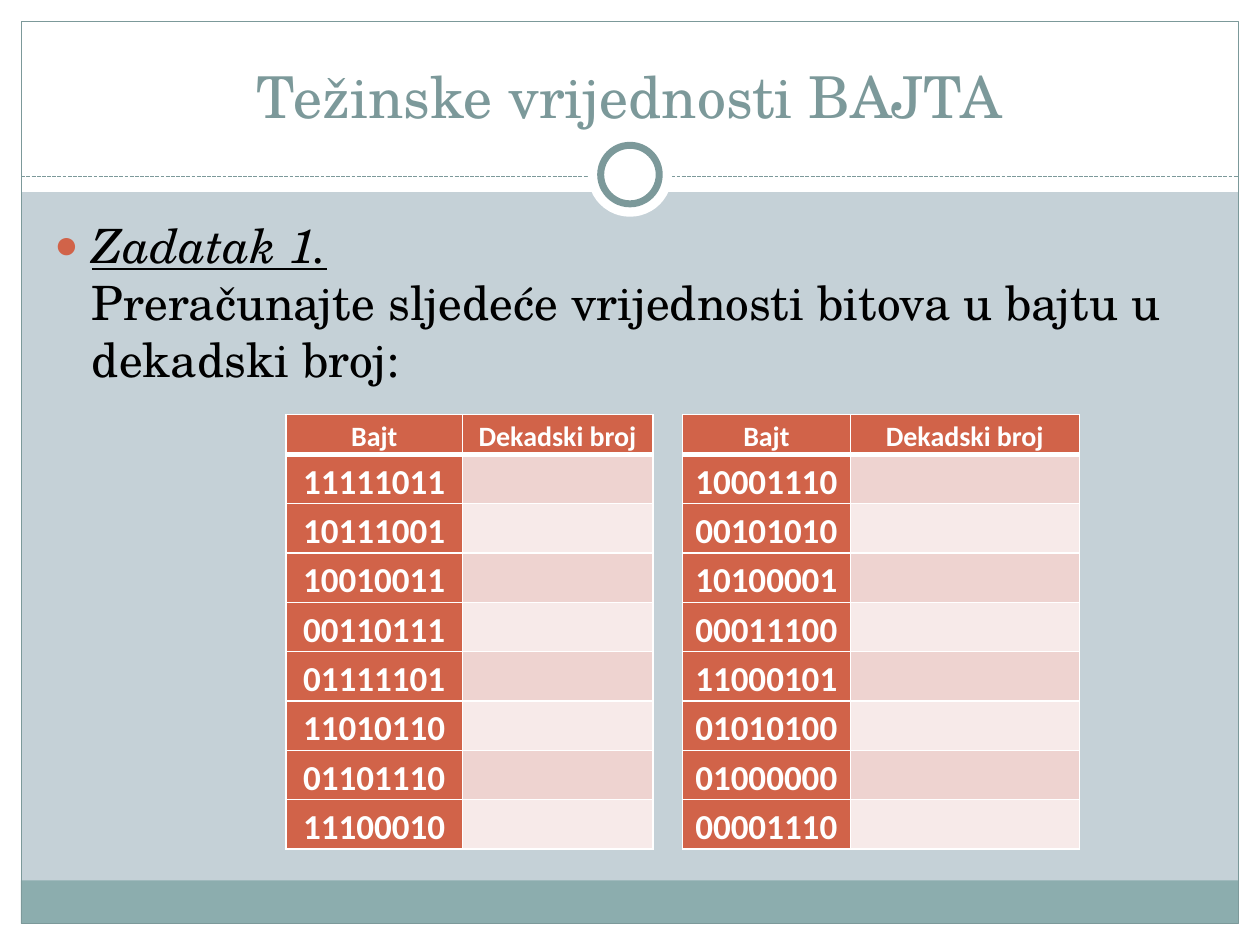
import pptx
import pptx.util
import pptx.dml.color
import pptx.enum.dml
import pptx.enum.shapes
import pptx.enum.text
import pptx.oxml
import pptx.oxml.ns

Cm, Pt = pptx.util.Cm, pptx.util.Pt
KIND = pptx.enum.shapes.MSO_SHAPE
ALIGN = pptx.enum.text.PP_ALIGN
SERIF, SANS = "TeX Gyre Schola", "Calibri"
WHITE, TEAL, RED = "FFFFFF", "7C999A", "D16349"
BANDS = ("EED3D0", "F7EAE9")

TITLE = "Težinske vrijednosti BAJTA"
TASK = "Zadatak 1."
TEXT = "Preračunajte sljedeće vrijednosti bitova u bajtu u dekadski broj:"
HEAD = ("Bajt", "Dekadski broj")
TABLES = [
    (5.77, (3.55, 3.84), ("11111011", "10111001", "10010011", "00110111",
                          "01111101", "11010110", "01101110", "11100010")),
    (13.76, (3.38, 4.62), ("10001110", "00101010", "10100001", "00011100",
                           "11000101", "01010100", "01000000", "00001110")),
]
SHAPES = [
    (KIND.RECTANGLE, (0, 18.62, 25.4, 0.43), WHITE, None, 0),
    (KIND.RECTANGLE, (0, 0, 25.4, 3.87), WHITE, None, 0),
    (KIND.RECTANGLE, (0, 0, 0.43, 19.05), WHITE, None, 0),
    (KIND.RECTANGLE, (24.97, 0, 0.43, 19.05), WHITE, None, 0),
    (KIND.RECTANGLE, (0.42, 17.75, 24.54, 0.87), "8CADAE", None, 0),
    (KIND.RECTANGLE, (0.43, 0.43, 24.54, 18.19), None, TEAL, 0.75),
    (KIND.OVAL, (11.85, 2.67, 1.7, 1.7), WHITE, None, 0),
    (KIND.OVAL, (12.11, 2.93, 1.18, 1.18), WHITE, TEAL, 4),
]


def paint(form, tone):
    if form is None:
        return
    if hasattr(form, "solid"):
        form.solid()
        form = form.fore_color
    form.rgb = pptx.dml.color.RGBColor.from_string(tone)


def style(para, face, size, tone):
    para.font.name, para.font.size = face, Pt(size)
    paint(para.font.color, tone)


def place(shape, box):
    shape.left, shape.top, shape.width, shape.height = map(Cm, box)


def node(host, xml):
    space = pptx.oxml.ns.nsdecls("a")
    host.append(pptx.oxml.parse_xml(xml.replace("/>", f" {space}/>", 1)
                if xml.endswith("/>") and xml.count("<") == 1
                else xml.replace(">", f" {space}>", 1)))


def draw(slide, kind, box, fill, line, width):
    shape = slide.shapes.add_shape(kind, *map(Cm, box))
    shape.shadow.inherit = False
    if fill:
        paint(shape.fill, fill)
    else:
        shape.fill.background()
    if line:
        paint(shape.line.fill, line)
        shape.line.width = Pt(width)
    else:
        shape.line.fill.background()


def rule(slide):
    line = slide.shapes.add_connector(
        pptx.enum.shapes.MSO_CONNECTOR.STRAIGHT,
        Cm(0.43), Cm(3.56), Cm(24.97), Cm(3.56))
    paint(line.line.fill, TEAL)
    line.line.width = Pt(0.75)
    line.line.dash_style = pptx.enum.dml.MSO_LINE.SQUARE_DOT
    node(line.element.spPr, "<a:effectLst/>")


def write(slide):
    title, body = slide.placeholders
    for shape in (title, body):
        shape.element.getparent().append(shape.element)
        shape.text_frame.auto_size = pptx.enum.text.MSO_AUTO_SIZE.NONE
    place(title, (0.84, 0.64, 23.7, 2.11))
    title.text_frame.vertical_anchor = pptx.enum.text.MSO_ANCHOR.BOTTOM
    title.text_frame.text = TITLE
    para = title.text_frame.paragraphs[0]
    para.alignment = ALIGN.CENTER
    style(para, SERIF, 33, TEAL)

    place(body, (0.84, 4.24, 23.62, 12.7))
    para = body.text_frame.paragraphs[0]
    style(para, SERIF, 27, "000000")
    task = para.add_run()
    task.text = TASK
    task.font.italic = task.font.underline = True
    para.add_line_break()
    para.add_run().text = TEXT
    for run in para.runs:
        run.font.name, run.font.size = SERIF, Pt(27)
    props = para._p.get_or_add_pPr()
    props.set("marL", str(Cm(0.76)))
    props.set("indent", str(-Cm(0.76)))
    marks = (f'<a:buClr><a:srgbClr val="{RED}"/></a:buClr>',
             '<a:buSzPct val="85000"/>', '<a:buChar char="●"/>')
    last = props.find(pptx.oxml.ns.qn("a:defRPr"))
    for mark in marks:
        node(props, mark)
    if last is not None:
        props.append(last)


def edge(cell, row):
    props = cell._tc.get_or_add_tcPr()
    for side in "LRTB":
        thick = (side, row) in (("B", 0), ("T", 1))
        node(props, f'<a:ln{side} w="{Pt(3 if thick else 1)}"><a:solidFill>'
                    f'<a:srgbClr val="{WHITE}"/></a:solidFill></a:ln{side}>')


def grid(slide, left, cols, codes):
    rows = [HEAD] + [(code, "") for code in codes]
    table = slide.shapes.add_table(
        len(rows), 2, Cm(left), Cm(8.36), Cm(sum(cols)), Cm(8.72)).table
    for col, width in zip(table.columns, cols):
        col.width = Cm(width)
    for r, row in enumerate(rows):
        table.rows[r].height = Cm(0.99 if r else 0.8)
        for c, text in enumerate(row):
            cell = table.cell(r, c)
            cell.margin_left = cell.margin_right = Cm(0.18)
            cell.margin_top = cell.margin_bottom = 0
            edge(cell, r)
            paint(cell.fill, BANDS[(r - 1) % 2] if r and c else RED)
            cell.text = text
            para = cell.text_frame.paragraphs[0]
            if text:
                para.alignment, para.line_spacing = ALIGN.CENTER, 1.15
                para.font.bold = True
                style(para, SANS, 20 if r else 16, WHITE)


def main():
    deck = pptx.Presentation()
    deck.slide_width, deck.slide_height = Cm(25.4), Cm(19.05)
    slide = deck.slides.add_slide(deck.slide_layouts[1])
    paint(slide.background.fill, "C5D1D7")
    for item in SHAPES[:6]:
        draw(slide, *item)
    rule(slide)
    for item in SHAPES[6:]:
        draw(slide, *item)
    write(slide)
    for item in TABLES:
        grid(slide, *item)
    deck.save("out.pptx")


if __name__ == "__main__":
    main()
